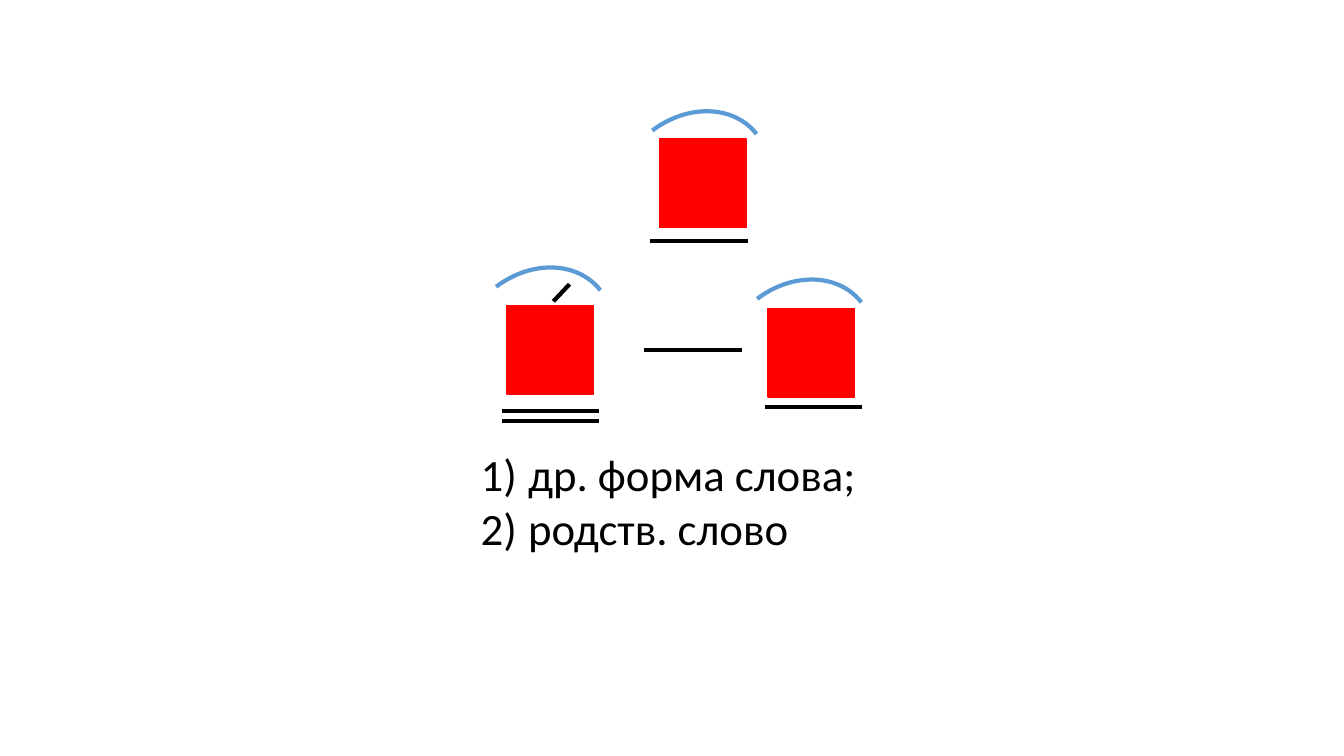
from lxml.etree import SubElement
from pptx import Presentation
from pptx.dml.color import RGBColor
from pptx.enum.shapes import MSO_CONNECTOR, MSO_SHAPE
from pptx.enum.text import MSO_AUTO_SIZE
from pptx.oxml.ns import qn
from pptx.util import Inches, Pt

COLUMNS, ROWS = 160, 90
CELL = Inches(1 / 12)


def grid(*cells):
    """Turn counts of grid cells into slide lengths."""
    return [round(cell * CELL) for cell in cells]


def paint(line, color, width):
    line.color.rgb = RGBColor.from_string(color)
    line.width = Pt(width)


deck = Presentation()
deck.slide_width, deck.slide_height = grid(COLUMNS, ROWS)
page = deck.slides.add_slide(deck.slide_layouts[6])

# Each word: its root square and the arc above it
words = [
    ((78.48, 16.56), (72.84, 13.92)),
    ((60.36, 36.36), (54.24, 32.52)),
    ((91.44, 36.72), (85.32, 33.96)),
]
for square_corner, arc_corner in words:
    square = page.shapes.add_shape(MSO_SHAPE.RECTANGLE, *grid(*square_corner, 10.32, 10.56))
    square.shadow.inherit = False
    square.fill.solid()
    square.fill.fore_color.rgb = RGBColor.from_string("FF0000")
    paint(square.line, "FF0000", 1)

    arc = page.shapes.add_shape(MSO_SHAPE.ARC, *grid(*arc_corner, 19.2, 15.72))
    arc.shadow.inherit = False
    arc.rotation = 322.6
    arc.fill.background()
    paint(arc.line, "5B9BD5", 3)

# Underlines and the dash share one length; the stress mark is slanted
dash_length = 11.6
dash_starts = [(77.4, 28.68), (59.76, 48.96), (59.76, 50.16), (91.08, 48.48), (76.68, 41.64)]
strokes = [(left, top, left + dash_length, top) for left, top in dash_starts]
strokes.append((67.8, 33.84, 65.88, 35.88))
for ends in strokes:
    stroke = page.shapes.add_connector(MSO_CONNECTOR.STRAIGHT, *grid(*ends))
    paint(stroke.line, "000000", 3)
    SubElement(stroke.element.spPr, qn("a:effectLst"))

box = page.shapes.add_textbox(*grid(56.04, 52.56, 77.88, 14.16))
frame = box.text_frame
frame.word_wrap = True
frame.auto_size = MSO_AUTO_SIZE.SHAPE_TO_FIT_TEXT
frame.text = "др. форма слова;\nродств. слово"
[indent] = grid(5.64)
for para in frame.paragraphs:
    properties = para._p.get_or_add_pPr()
    properties.set("marL", str(indent))
    properties.set("indent", str(-indent))
    SubElement(properties, qn("a:buAutoNum"), type="arabicParenR")
    para.font.name = "Calibri"
    para.font.size = Pt(32)
    para.font.color.rgb = RGBColor.from_string("000000")

deck.save("out.pptx")
